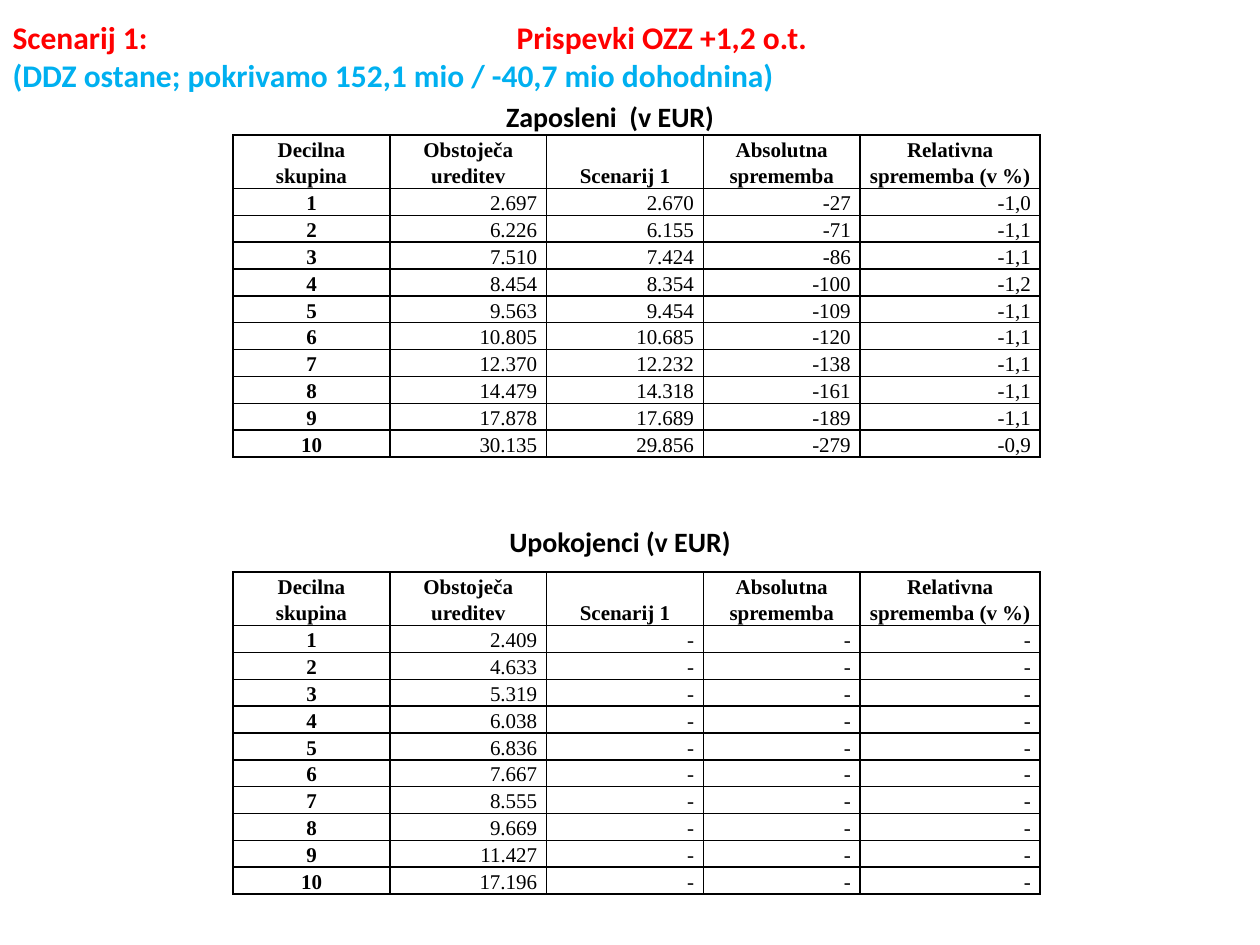
import pptx
import pptx.dml.color
import pptx.enum.text
import pptx.oxml
import pptx.oxml.ns
import pptx.util
from pptx.util import Cm

RED = pptx.dml.color.RGBColor(0xFF, 0x00, 0x00)
BLUE = pptx.dml.color.RGBColor(0x00, 0xB0, 0xF0)
BLACK = pptx.dml.color.RGBColor(0x00, 0x00, 0x00)
ALIGN = pptx.enum.text.PP_ALIGN
ANCHOR = pptx.enum.text.MSO_ANCHOR

HEADINGS = ["Decilna skupina", "Obstoječa ureditev", "Scenarij 1",
            "Absolutna sprememba", "Relativna sprememba (v %)"]
EMPLOYEES = [
    ("2.697", "2.670", "-27", "-1,0"),
    ("6.226", "6.155", "-71", "-1,1"),
    ("7.510", "7.424", "-86", "-1,1"),
    ("8.454", "8.354", "-100", "-1,2"),
    ("9.563", "9.454", "-109", "-1,1"),
    ("10.805", "10.685", "-120", "-1,1"),
    ("12.370", "12.232", "-138", "-1,1"),
    ("14.479", "14.318", "-161", "-1,1"),
    ("17.878", "17.689", "-189", "-1,1"),
    ("30.135", "29.856", "-279", "-0,9"),
]
PENSIONS = ["2.409", "4.633", "5.319", "6.038", "6.836",
            "7.667", "8.555", "9.669", "11.427", "17.196"]
PENSIONERS = [(amount, "-", "-", "-") for amount in PENSIONS]

COLUMN_WIDTHS = [Cm(3.16)] * 4 + [Cm(3.63)]
ROW_HEIGHT = Cm(0.54)


def add_span(para, text, size, color, font="Calibri", bold=True):
    span = para.add_run()
    span.text = text
    span.font.name = font
    span.font.size = pptx.util.Pt(size)
    span.font.bold = bold
    span.font.color.rgb = color


def add_tab_stop(para, position):
    props = para._p.get_or_add_pPr()
    props.append(pptx.oxml.parse_xml(
        f'<a:tabLst {pptx.oxml.ns.nsdecls("a")}>'
        f'<a:tab pos="{position}" algn="l"/></a:tabLst>'))


def place_title(page, left, top, width, height):
    box = page.shapes.title
    box.left, box.top, box.width, box.height = left, top, width, height
    frame = box.text_frame
    frame.auto_size = pptx.enum.text.MSO_AUTO_SIZE.NONE
    frame.vertical_anchor = ANCHOR.MIDDLE
    para = frame.paragraphs[0]
    para.alignment = ALIGN.LEFT
    add_tab_stop(para, Cm(10.16))
    add_span(para, "Scenarij 1:\tPrispevki OZZ +1,2 o.t.", 18, RED)
    para.add_line_break()
    add_span(para, "(DDZ ostane; pokrivamo 152,1 mio / -40,7 mio dohodnina)", 18, BLUE)


def place_caption(page, text, left, top, width, height):
    box = page.shapes.add_textbox(left, top, width, height)
    frame = box.text_frame
    frame.word_wrap = True
    frame.vertical_anchor = ANCHOR.MIDDLE
    para = frame.paragraphs[0]
    para.alignment = ALIGN.CENTER
    add_span(para, text, 16, BLACK)


def add_borders(cell, color, width):
    props = cell._tc.get_or_add_tcPr()
    for side in ("lnL", "lnR", "lnT", "lnB"):
        props.append(pptx.oxml.parse_xml(
            f'<a:{side} {pptx.oxml.ns.nsdecls("a")} w="{width}"><a:solidFill>'
            f'<a:srgbClr val="{color}"/></a:solidFill></a:{side}>'))


def fill_cell(cell, text, bold, anchor):
    cell.margin_left = cell.margin_right = Cm(0.19)
    cell.margin_top = cell.margin_bottom = 0
    cell.vertical_anchor = anchor
    add_borders(cell, BLACK, pptx.util.Pt(1))
    cell.fill.background()
    para = cell.text_frame.paragraphs[0]
    para.alignment = ALIGN.CENTER if bold else ALIGN.RIGHT
    para.line_spacing = 1.15
    add_span(para, text, 12, BLACK, "Times New Roman", bold)


def place_decile_table(page, values, left, top):
    """Headings, then one row for each decile, numbered from 1."""
    rows = [HEADINGS] + [(str(decile), *row) for decile, row in enumerate(values, 1)]
    height = ROW_HEIGHT * (len(rows) + 1)
    table = page.shapes.add_table(len(rows), len(HEADINGS), left, top,
                                  sum(COLUMN_WIDTHS), height).table
    table.first_row = table.horz_banding = False
    for column, width in zip(table.columns, COLUMN_WIDTHS):
        column.width = width
    for r, row in enumerate(rows):
        table.rows[r].height = ROW_HEIGHT if r else ROW_HEIGHT * 2
        for c, text in enumerate(row):
            anchor = ANCHOR.BOTTOM if c == 2 else ANCHOR.MIDDLE
            fill_cell(table.cell(r, c), text, r == 0 or c == 0, anchor)


def main():
    deck = pptx.Presentation()
    deck.slide_width, deck.slide_height = Cm(25.4), Cm(19.05)
    page = deck.slides.add_slide(deck.slide_layouts[5])
    place_title(page, 0, Cm(0.33), Cm(19.71), Cm(1.6))
    place_decile_table(page, EMPLOYEES, Cm(4.7), Cm(2.72))
    place_decile_table(page, PENSIONERS, Cm(4.7), Cm(11.53))
    place_caption(page, "Zaposleni  (v EUR)", Cm(6.7), Cm(1.94), Cm(11.2), Cm(0.8))
    place_caption(page, "Upokojenci (v EUR)", Cm(6.9), Cm(10.52), Cm(11.2), Cm(0.8))
    deck.save("out.pptx")


if __name__ == "__main__":
    main()
